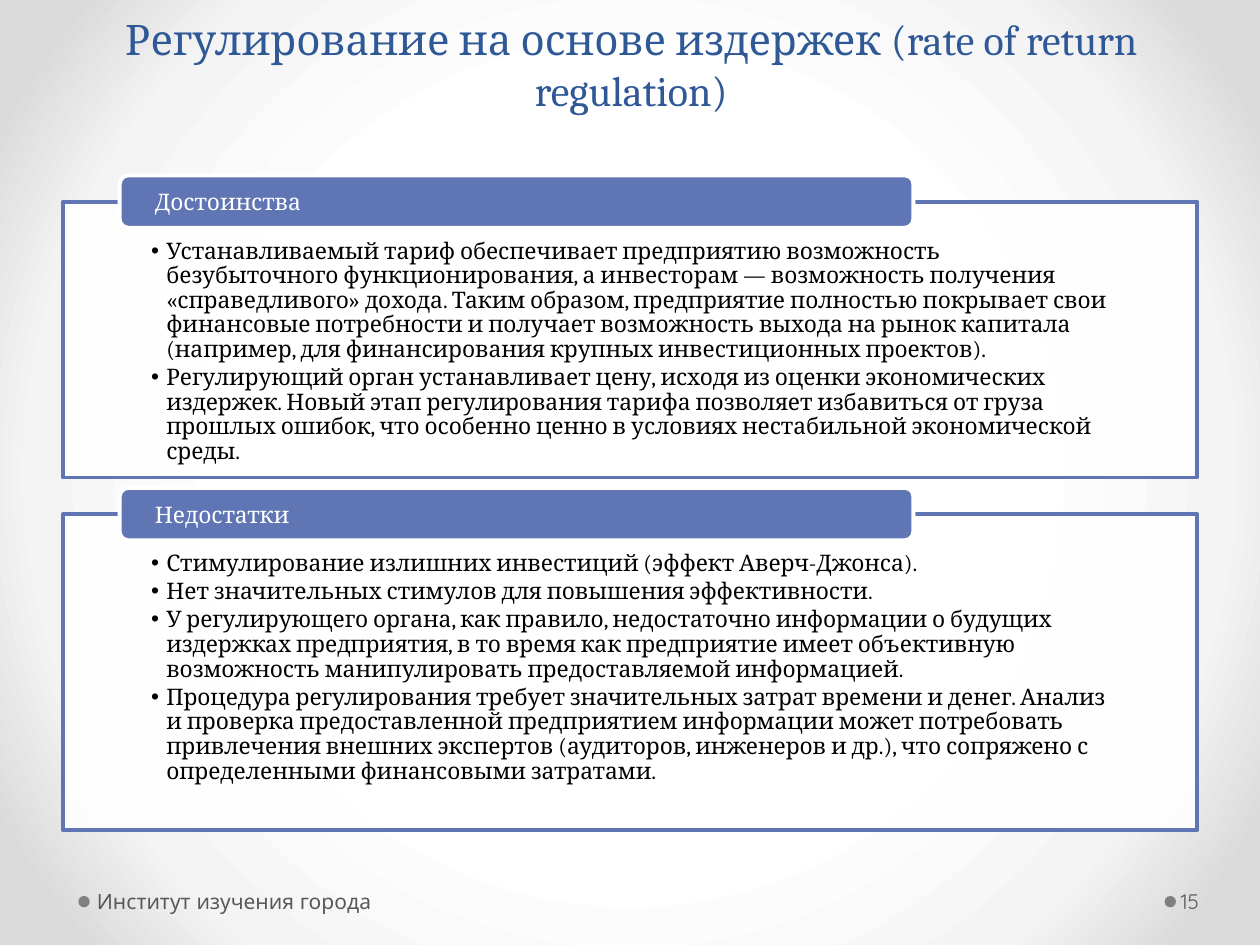
"""Builds a slide on the pros and cons of cost-based tariff regulation."""
from lxml import etree
from pptx import Presentation
from pptx.dml.color import RGBColor
from pptx.enum.shapes import MSO_SHAPE
from pptx.enum.text import MSO_ANCHOR, MSO_AUTO_SIZE, PP_ALIGN
from pptx.oxml import parse_xml
from pptx.oxml.ns import nsdecls, qn
from pptx.util import Pt

ROUND, OVAL = MSO_SHAPE.ROUNDED_RECTANGLE, MSO_SHAPE.OVAL
TOP, MIDDLE, BOTTOM = MSO_ANCHOR.TOP, MSO_ANCHOR.MIDDLE, MSO_ANCHOR.BOTTOM
LEFT, CENTER = PP_ALIGN.LEFT, PP_ALIGN.CENTER
FIXED = MSO_AUTO_SIZE.NONE

TITLE = "Регулирование на основе издержек (rate of return regulation)"
PANELS = [
    ("Достоинства", 115.2, 157.7, [
        "Устанавливаемый тариф обеспечивает предприятию возможность безубыточного "
        "функционирования, а инвесторам — возможность получения «справедливого» дохода. "
        "Таким образом, предприятие полностью покрывает свои финансовые потребности и "
        "получает возможность выхода на рынок капитала (например, для финансирования "
        "крупных инвестиционных проектов).",
        "Регулирующий орган устанавливает цену, исходя из оценки экономических издержек. "
        "Новый этап регулирования тарифа позволяет избавиться от груза прошлых ошибок, "
        "что особенно ценно в условиях нестабильной экономической среды.",
    ]),
    ("Недостатки", 293.8, 180.7, [
        "Стимулирование излишних инвестиций (эффект Аверч-Джонса).",
        "Нет значительных стимулов для повышения эффективности.",
        "У регулирующего органа, как правило, недостаточно информации о будущих "
        "издержках предприятия, в то время как предприятие имеет объективную "
        "возможность манипулировать предоставляемой информацией.",
        "Процедура регулирования требует значительных затрат времени и денег. Анализ и "
        "проверка предоставленной предприятием информации может потребовать привлечения "
        "внешних экспертов (аудиторов, инженеров и др.), что сопряжено с определенными "
        "финансовыми затратами.",
    ]),
]


def color(code):
    return RGBColor.from_string(code)


class Deck:
    font, note = "Cambria", "Quicksand"
    blue, white, black = "6076B4", "FFFFFF", "000000"
    navy, gray, dot = "2F5897", "595959", "808080"

    def __init__(self):
        self.prs = Presentation()
        self.prs.slide_width, self.prs.slide_height = Pt(720), Pt(540)
        self.slide = self.prs.slides.add_slide(self.prs.slide_layouts[3])

    def glow(self, stops):
        self.slide.background.fill.solid()
        marks = "".join(f'<a:gs pos="{pos * 1000}"><a:srgbClr val="{code}"/></a:gs>'
                        for pos, code in stops)
        grad = parse_xml(
            f'<a:gradFill {nsdecls("a")} rotWithShape="1"><a:gsLst>{marks}</a:gsLst>'
            '<a:path path="circle"><a:fillToRect l="50000" t="50000" r="50000" b="50000"/>'
            '</a:path></a:gradFill>')
        props = self.slide.element.cSld.bg.bgPr
        props.replace(props.find(qn("a:solidFill")), grad)

    def place(self, shape, box):
        shape.left, shape.top, shape.width, shape.height = map(Pt, box)

    def paint(self, shape, fill, line=None):
        shape.fill.solid()
        shape.fill.fore_color.rgb = color(fill)
        if line:
            shape.line.color.rgb = color(line)
            shape.line.width = Pt(2.25)
        else:
            shape.line.fill.background()

    def label(self, shape, text, size, hue, font, anchor, inset, align=LEFT):
        frame = shape.text_frame
        frame.text = text
        frame.word_wrap = True
        frame.auto_size = FIXED
        frame.vertical_anchor = anchor
        (frame.margin_left, frame.margin_top,
         frame.margin_right, frame.margin_bottom) = map(Pt, inset)
        for para in frame.paragraphs:
            para.alignment = align
            for run in para.runs:
                run.font.size, run.font.name = Pt(size), font
                run.font.color.rgb = color(hue)

    def title(self, text, box):
        shape = self.slide.shapes.title
        self.place(shape, box)
        self.label(shape, text, 24, self.navy, self.font, BOTTOM, (7.2, 3.6, 7.2, 3.6), CENTER)

    def panel(self, index, items, box):
        shape = self.slide.placeholders[index]
        self.place(shape, box)
        self.paint(shape, self.white, self.blue)
        tint = shape.element.spPr.find(qn("a:solidFill"))[0]
        etree.SubElement(tint, qn("a:alpha"), val="90000")
        self.label(shape, "\n".join(items), 13, self.black, self.font, TOP,
                   (50.4, 21.6, 50.4, 7.2))
        for para in shape.text_frame.paragraphs:
            para.line_spacing = 0.9
            para.space_before, para.space_after = Pt(0), Pt(2)
            props = para._p.get_or_add_pPr()
            props.set("marL", str(Pt(8.64)))
            props.set("indent", str(-Pt(8.64)))

    def shape(self, kind, box, fill, line=None):
        shape = self.slide.shapes.add_shape(kind, *map(Pt, box))
        shape.shadow.inherit = False
        self.paint(shape, fill, line)
        return shape

    def head(self, text, box):
        shape = self.shape(ROUND, box, self.blue, self.white)
        self.label(shape, text, 13, self.white, self.font, MIDDLE, (18.7, 0, 18.7, 0))

    def foot(self, text, left, width, inset):
        self.shape(OVAL, (left - 7, 512, 6.5, 6.5), self.dot)
        shape = self.slide.shapes.add_textbox(*map(Pt, (left, 500.4, width, 28.8)))
        self.label(shape, text, 12, self.gray, self.note, MIDDLE, (inset, 3.6, 3.6, 3.6))


def main():
    deck = Deck()
    deck.glow([(50, "FFFFFF"), (76, "F4F4F4"), (92, "DADADA")])
    deck.title(TITLE, (36.7, 31.7, 648, 37.4))
    for index, (name, top, height, items) in enumerate(PANELS, 1):
        deck.panel(index, items, (36, top, 648, height))
        deck.head(name, (68.4, top - 15, 453.6, 30))
    deck.foot("Институт изучения города", 51.8, 224, 3.6)
    deck.foot("15", 672.5, 44, 2.2)
    deck.prs.save("out.pptx")


if __name__ == "__main__":
    main()
